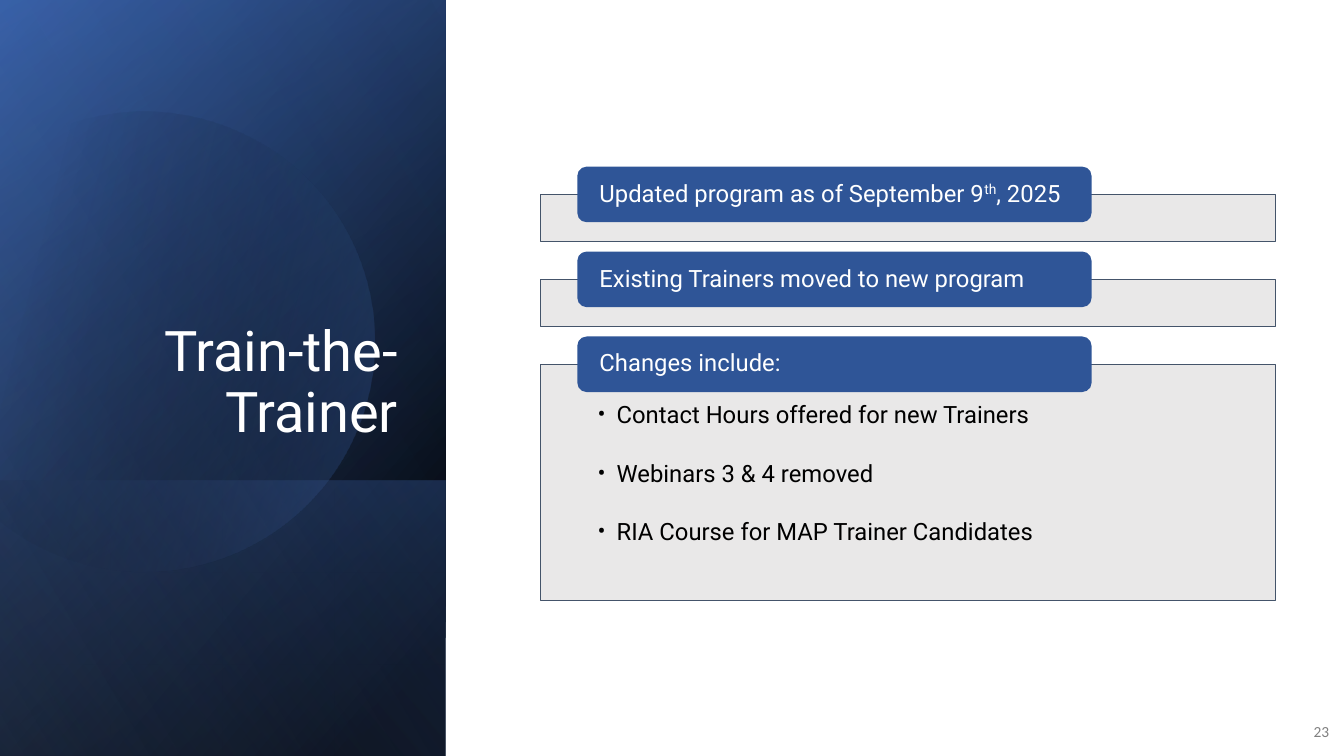
import math

from pptx import Presentation, oxml
from pptx.dml.color import RGBColor
from pptx.enum import shapes, text
from pptx.oxml import ns
from pptx.util import Cm, Pt

COLORS = {
    "white": "FFFFFF", "black": "000000", "pill": "2F5597", "blue": "4472C4",
    "pale": "8FAADC", "card": "E7E6E6", "border": "44546A", "number": "808080",
}


def paint_gradient(shape, stops, angle):
    """Fill with (position %, color name, opacity %) stops along an angle in degrees."""
    shape.shadow.inherit = False
    shape.line.fill.background()
    shape.fill.background()
    marks = "".join(
        f'<a:gs pos="{pos * 1000}"><a:srgbClr val="{COLORS[name]}">'
        f'<a:alpha val="{opacity * 1000}"/></a:srgbClr></a:gs>'
        for pos, name, opacity in stops)
    gradient = oxml.parse_xml(
        f'<a:gradFill {ns.nsdecls("a")} rotWithShape="1"><a:gsLst>{marks}</a:gsLst>'
        f'<a:lin ang="{angle * 60000}" scaled="0"/></a:gradFill>')
    properties = shape._element.spPr
    properties.replace(properties.find(ns.qn("a:noFill")), gradient)


def write(paragraph, words, size, color, font="Roboto"):
    run = paragraph.add_run()
    run.text = words
    for name, value in {"name": font, "size": Pt(size)}.items():
        setattr(run.font, name, value)
    run.font.color.rgb = RGBColor.from_string(COLORS[color])
    return run


deck = Presentation()
deck.slide_width, deck.slide_height = Cm(33.87), Cm(19.05)
slide = deck.slides.add_slide(deck.slide_layouts[5])

# Side panel: layered gradients, each turned a quarter and mirrored
FULL = (-3.91, 3.91, 19.05, 11.23)
LOWER = (2.13, 9.97, 6.96, 11.23)
panel_layers = [
    (FULL, [(8, "black", 100), (100, "pill", 100)], 50),
    (FULL, [(0, "black", 0), (99, "blue", 46)], 30),
    (LOWER, [(2, "blue", 29), (100, "black", 30)], 130),
    "disc",
    (FULL, [(0, "black", 0), (99, "pale", 11)], 120),
]
for layer in panel_layers:
    if layer == "disc":
        center_x, center_y, radius = 3.61, 8.5, 5.8
        angles = [math.radians(a) for a in (-118, -90, 0, 90, 150)]
        rim = [(Cm(center_x + radius * math.cos(a)), Cm(center_y + radius * math.sin(a)))
               for a in angles]
        outline = slide.shapes.build_freeform(*rim[0])
        outline.add_line_segments(rim[1:], close=True)
        disc = outline.convert_to_shape()
        # Bend each straight segment of the rim into a circular arc
        sides = list(disc._element.iter(ns.qn("a:lnTo")))
        for side, start, end in zip(sides, angles, angles[1:]):
            reach = 4 / 3 * math.tan((end - start) / 4)
            arc = [(math.cos(a) - k * math.sin(a), math.sin(a) + k * math.cos(a))
                   for a, k in ((start, reach), (end, -reach), (end, 0))]
            points = "".join(
                f'<a:pt x="{Cm(center_x + radius * x) - disc.left}" '
                f'y="{Cm(center_y + radius * y) - disc.top}"/>' for x, y in arc)
            side.getparent().replace(side, oxml.parse_xml(
                f'<a:cubicBezTo {ns.nsdecls("a")}>{points}</a:cubicBezTo>'))
        disc.rotation = -16.1
        paint_gradient(disc, [(29, "black", 0), (100, "blue", 43)], 30)
        continue
    frame, stops, angle = layer
    panel = slide.shapes.add_shape(shapes.MSO_SHAPE.RECTANGLE, *map(Cm, frame))
    panel.rotation = 90
    panel._element.spPr.xfrm.set("flipH", "1")
    paint_gradient(panel, stops, angle)

# Title, brought in front of the panel
title = slide.shapes.title
slide.shapes._spTree.append(title._element)
for name, value in {"left": 1.63, "top": 4.68, "width": 8.65, "height": 6.65}.items():
    setattr(title, name, Cm(value))
for name, value in {"word_wrap": True, "auto_size": text.MSO_AUTO_SIZE.NONE,
                    "vertical_anchor": text.MSO_ANCHOR.BOTTOM}.items():
    setattr(title.text_frame, name, value)
heading = title.text_frame.paragraphs[0]
heading.alignment, heading.line_spacing = text.PP_ALIGN.RIGHT, 0.9
write(heading, "Train-the- Trainer", 40, "white")

# Page number
page = slide.shapes.add_textbox(Cm(32.51), Cm(17.93), Cm(1.24), Cm(1.02)).text_frame
page.word_wrap, page.vertical_anchor = True, text.MSO_ANCHOR.MIDDLE
page.paragraphs[0].alignment = text.PP_ALIGN.RIGHT
write(page.paragraphs[0], "23", 11, "number", "Calibri")

# Cards: a grey body with a blue heading pill over its top edge
changes = ["Contact Hours offered for new Trainers", "Webinars 3 & 4 removed",
           "RIA Course for MAP Trainer Candidates"]
cards = [
    (["Updated program as of September 9", "th", ", 2025"], [], 1.19),
    (["Existing Trainers moved to new program"], [], 1.19),
    (["Changes include:"], changes, 5.94),
]
for row, (label, points, height) in enumerate(cards):
    top = 4.9 + row * 2.14
    body = slide.shapes.add_shape(
        shapes.MSO_SHAPE.RECTANGLE, Cm(13.61), Cm(top), Cm(18.52), Cm(height))
    pill = slide.shapes.add_shape(
        shapes.MSO_SHAPE.ROUNDED_RECTANGLE, Cm(14.55), Cm(top - 0.7), Cm(12.96), Cm(1.4))
    for part, color in ((body, "card"), (pill, "pill")):
        part.shadow.inherit = False
        part.fill.solid()
        part.fill.fore_color.rgb = RGBColor.from_string(COLORS[color])
    tint = body._element.spPr.find(ns.qn("a:solidFill"))[0]
    tint.append(oxml.parse_xml(f'<a:alpha {ns.nsdecls("a")} val="90000"/>'))
    body.line.color.rgb = RGBColor.from_string(COLORS["border"])
    body.line.width = Pt(0.5)
    pill.line.fill.background()

    for name, value in {"margin_left": Cm(0.49), "margin_right": Cm(0.49),
                        "margin_top": 0, "margin_bottom": 0,
                        "vertical_anchor": text.MSO_ANCHOR.MIDDLE}.items():
        setattr(pill.text_frame, name, value)
    caption = pill.text_frame.paragraphs[0]
    caption.alignment, caption.line_spacing = text.PP_ALIGN.LEFT, 0.9
    for words in label:
        run = write(caption, words, 17, "white")
        if words == "th":
            run._r.get_or_add_rPr().set("baseline", "30000")

    for name, value in {"margin_left": Cm(1.45), "margin_right": Cm(1.45),
                        "margin_top": Cm(0.97), "margin_bottom": Cm(0.33),
                        "vertical_anchor": text.MSO_ANCHOR.TOP}.items():
        if points:
            setattr(body.text_frame, name, value)
    for index, point in enumerate(points):
        item = body.text_frame.add_paragraph() if index else body.text_frame.paragraphs[0]
        settings = item._p.get_or_add_pPr()
        settings.set("marL", str(Cm(0.48)))
        settings.set("indent", str(-Cm(0.48)))
        for bullet in ('buFont %s typeface="Roboto"', 'buChar %s char="•"'):
            settings.append(oxml.parse_xml(f'<a:{bullet % ns.nsdecls("a")}/>'))
        item.alignment, item.line_spacing = text.PP_ALIGN.LEFT, 0.9
        if index:
            item.space_before = Pt(23.6)
        write(item, point, 17, "black")

deck.save("out.pptx")
